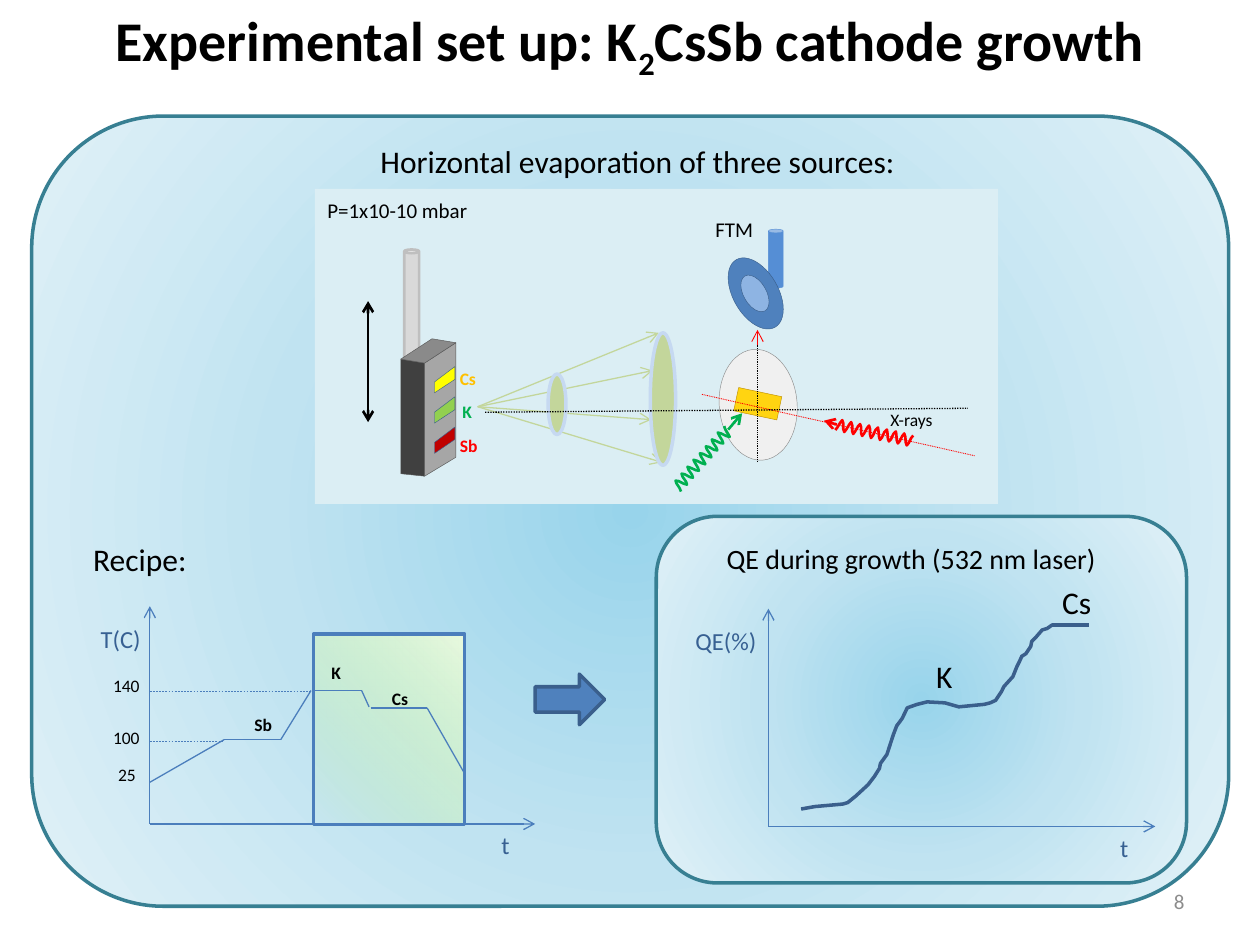
"""Build the K2CsSb cathode growth slide: evaporation set-up, recipe and QE curve."""
from math import cos, hypot, pi

from lxml.etree import SubElement
from pptx import Presentation
from pptx.dml.color import RGBColor
from pptx.enum.dml import MSO_LINE
from pptx.enum.shapes import MSO_CONNECTOR, MSO_SHAPE
from pptx.enum.text import MSO_ANCHOR, PP_ALIGN
from pptx.oxml.ns import qn
from pptx.util import Cm, Pt

T = dict(
    font="Calibri", title=32, head=18, sub=16, axis=14, note=12, small=10,
    black="000000", grey="8C8C8C", navy="376092", blue="4B7EBC", edge="3A5F8C",
    teal="377F92", red="FF0000", green="00B050", gold="FFC000", beam="C3D69B",
    rim="C6D9F1", steel="4F81BD", stage="DBEEF4",
    glow=[(0, "98D4EB", 100), (50, "C0E3F1", 100), (100, "E0F1F7", 100)],
    window=[(0, "D5F6C0", 0), (1, "BEF297", 0), (100, "EAFAE0", 100)],
)
INCH = 2.54

TITLE = [("Experimental set up: K", 0), ("2", -25), ("CsSb cathode growth", 0)]
PANELS = [(0.25, 0.92, 9.5, 6.27), (5.21, 4.1, 4.21, 2.91)]
AXES = [(1.19, 6.54, 4.25, 4.81), (6.1, 6.56, 9.17, 4.83)]
RECIPE = [[(1.19, 6.21), (1.78, 5.87), (2.23, 5.87), (2.47, 5.48)],
          [(2.49, 5.48), (2.87, 5.48), (2.93, 5.61)],
          [(2.94, 5.62), (3.39, 5.62), (3.69, 6.14)]]
LEVELS = [(5.49, 2.47), (5.88, 1.78)]
QE = [(6.36, 6.42), (6.47, 6.4), (6.69, 6.38), (6.73, 6.37), (6.79, 6.32), (6.89, 6.23),
      (6.94, 6.16), (6.98, 6.1), (6.99, 6.06), (7.04, 5.99), (7.09, 5.83), (7.12, 5.76),
      (7.14, 5.73), (7.16, 5.7), (7.2, 5.62), (7.28, 5.59), (7.36, 5.57), (7.5, 5.58),
      (7.61, 5.61), (7.81, 5.59), (7.86, 5.58), (7.9, 5.56), (7.95, 5.49), (7.97, 5.45),
      (8.04, 5.37), (8.07, 5.29), (8.09, 5.25), (8.11, 5.21), (8.14, 5.19), (8.18, 5.13),
      (8.19, 5.09), (8.22, 5.06), (8.27, 5), (8.31, 4.99), (8.35, 4.96), (8.64, 4.96)]
BLOCK = [([(3.18, 2.85), (3.37, 2.88), (3.37, 3.78), (3.18, 3.76)], "404040"),
         ([(3.37, 2.88), (3.62, 2.72), (3.62, 3.63), (3.37, 3.78)], "A6A6A6"),
         ([(3.18, 2.85), (3.43, 2.69), (3.62, 2.72), (3.37, 2.88)], "8A8A8A")]
SOURCES = [("Cs", "FFFF00", "gold", 3.55, 2.87, 0.33),
           ("K", "92D050", "green", 3.57, 3.13, 0.28),
           ("Sb", "C00000", "red", 3.55, 3.4, 0.34)]
BEAMS = [(5.23, 2.64), (5.25, 3.67), (5.18, 2.94), (5.17, 3.33)]
WAVES = [((7.24, 3.5), (6.64, 3.37), (6.54, 3.34), T["red"]),
         ((5.37, 3.87), (5.78, 3.41), (5.89, 3.28), T["green"])]
LABELS = {
    ("head", "black", False): [
        ("Horizontal evaporation of three sources:", 2.92, 1.08, 4.33),
        ("Recipe:", 0.64, 4.24, 0.95), ("K", 7.33, 5.17, 0.33), ("Cs", 8.33, 4.58, 0.44)],
    ("sub", "black", False): [("QE during growth (532 nm laser)", 5.67, 4.25, 3.49)],
    ("axis", "navy", False): [
        ("T(C)", 0.7, 4.9, 0.52), ("t", 3.88, 6.54, 0.27),
        ("QE(%)", 5.42, 4.92, 0.69), ("t", 8.79, 6.56, 0.27)],
    ("note", "black", False): [("FTM", 5.58, 1.67, 0.51), ("P=1x10-10 mbar", 2.5, 1.52, 1.33)],
    ("small", "black", False): [
        ("140", 0.8, 5.31, 0.42), ("100", 0.8, 5.72, 0.42),
        ("25", 0.84, 6.01, 0.35), ("X-rays", 6.97, 3.2, 0.55)],
    ("small", "black", True): [
        ("Sb", 1.92, 5.62, 0.38), ("K", 2.53, 5.21, 0.28), ("Cs", 3.01, 5.41, 0.33)],
}

prs = Presentation()
prs.slide_width, prs.slide_height = Cm(25.4), Cm(19.05)
s = prs.slides.add_slide(prs.slide_layouts[5])


def cm(*values):
    return [Cm(round(v * INCH, 2)) for v in values]


def add_run(p, words, size="small", color="black", bold=False):
    r = p.add_run()
    r.text = words
    r.font.name, r.font.size, r.font.bold = T["font"], Pt(T[size]), bold
    r.font.color.rgb = RGBColor.from_string(T[color])
    return r


def text(words, x, y, w, align=PP_ALIGN.LEFT, **style):
    tf = s.shapes.add_textbox(*cm(x, y, w, 0.3)).text_frame
    tf.word_wrap = False
    tf.paragraphs[0].alignment = align
    add_run(tf.paragraphs[0], words, **style)


def paint(sp, fill=None, line=None, width=0.75):
    sp.shadow.inherit = False
    for part, color in [(sp.fill, fill), (sp.line.fill, line)]:
        if color:
            part.solid()
            part.fore_color.rgb = RGBColor.from_string(color)
        else:
            part.background()
    sp.line.width = Pt(width)
    return sp


def shape(kind, box, fill=None, line=None, width=0.75, rot=0):
    sp = paint(s.shapes.add_shape(kind, *cm(*box)), fill, line, width)
    sp.rotation = rot
    return sp


def gradient(sp, stops, angle=None):
    sp.fill.gradient()
    grad = sp._element.spPr.find(qn("a:gradFill"))
    for child in list(grad):
        grad.remove(child)
    gs_list = SubElement(grad, qn("a:gsLst"))
    for pos, color, alpha in stops:
        gs = SubElement(gs_list, qn("a:gs"), pos=str(pos * 1000))
        clr = SubElement(gs, qn("a:srgbClr"), val=color)
        SubElement(clr, qn("a:alpha"), val=str(alpha * 1000))
    if angle is None:
        way = SubElement(grad, qn("a:path"), path="circle")
        SubElement(way, qn("a:fillToRect"), l="50000", t="50000", r="50000", b="50000")
    else:
        SubElement(grad, qn("a:lin"), ang=str(angle * 60000), scaled="0")


def line(a, b, color=T["blue"], width=0.75, dash=None, ends=()):
    c = s.shapes.add_connector(MSO_CONNECTOR.STRAIGHT, *cm(*a, *b))
    c.line.color.rgb, c.line.width = RGBColor.from_string(color), Pt(width)
    if dash:
        c.line.dash_style = dash
    for end in ends:
        SubElement(c.line._get_or_add_ln(), qn(f"a:{end}End"), type="arrow")
    SubElement(c._element.spPr, qn("a:effectLst"))


def outline(points, fill=None, color=None, width=0.75):
    pts = [cm(*pt) for pt in points]
    fb = s.shapes.build_freeform(*pts[0])
    fb.add_line_segments(pts[1:], close=bool(fill))
    paint(fb.convert_to_shape(), fill, color, width)


def wave(a, b, cycles=8.5, amp=0.045, steps=51):
    dx, dy = b[0] - a[0], b[1] - a[1]
    for i in range(steps + 1):
        t = i / steps
        off = amp * cos(2 * pi * cycles * t) / hypot(dx, dy)
        yield a[0] + dx * t - dy * off, a[1] + dy * t + dx * off


def panel(box, x, y, right, top):
    gradient(shape(MSO_SHAPE.ROUNDED_RECTANGLE, box, T["stage"], T["teal"], 2), T["glow"])
    for end in [(right, y), (x, top)]:
        line((x, y), end, ends=["tail"])


def draw_stage():
    oval, can, dot = MSO_SHAPE.OVAL, MSO_SHAPE.CAN, MSO_LINE.ROUND_DOT
    shape(MSO_SHAPE.RECTANGLE, (2.5, 1.5, 5.42, 2.5), T["stage"])
    shape(can, (6.1, 1.82, 0.12, 0.47), "558ED5", "558ED5", 0.25)
    shape(oval, (5.82, 2.02, 0.36, 0.62), T["steel"], T["edge"], 0.25, -30)
    shape(oval, (5.9, 2.17, 0.18, 0.32), "8EB4E3", T["edge"], 0.25, -30)
    shape(oval, (5.71, 2.77, 0.62, 0.88), "F0F0F0", T["grey"], 0.25, -5)
    shape(MSO_SHAPE.RECTANGLE, (5.84, 3.11, 0.35, 0.19), "FFD411", "BF9000", 0.25, 12)
    shape(can, (3.21, 1.98, 0.12, 0.95), "D9D9D9", "BFBFBF", 1.5)
    for points, fill in BLOCK:
        outline(points, fill, "595959", 0.25)
    for i, (name, fill, color, x, y, w) in enumerate(SOURCES):
        top = 2.91 + 0.24 * i
        patch = [(3.45, top + 0.12), (3.61, top), (3.61, top + 0.1), (3.45, top + 0.21)]
        outline(patch, fill, T["edge"], 0.25)
        text(name, x, y, w, color=color, bold=True)
    for end in BEAMS:
        line((3.79, 3.23), end, T["beam"], ends=["tail"])
    for box in [(5.16, 2.64, 0.2, 1.05), (4.35, 2.97, 0.14, 0.48)]:
        shape(oval, box, T["beam"], T["rim"], 2)
    line((5.57, 3.13), (7.74, 3.62), T["red"], 0.5, dot)
    line((6.01, 2.72), (6.01, 3.67), T["black"], 0.5, dot)
    line((6.01, 2.74), (6.01, 2.62), T["red"], 0.5, ends=["tail"])
    line((3.85, 3.27), (7.68, 3.24), T["black"], 0.75, dot)
    line((2.92, 2.39), (2.92, 3.35), T["black"], 1.5, ends=["head", "tail"])
    for a, b, tip, color in WAVES:
        outline(wave(a, b), color=color, width=1.5)
        line(b, tip, color, 1.5, ends=["tail"])


def main():
    title = s.shapes.title
    title.left, title.top, title.width, title.height = cm(0, 0, 10, 0.7)
    title.text_frame.vertical_anchor = MSO_ANCHOR.MIDDLE
    p = title.text_frame.paragraphs[0]
    p.alignment = PP_ALIGN.CENTER
    for words, base in TITLE:
        add_run(p, words, "title", bold=True).font._element.set("baseline", str(base * 1000))
    panel(PANELS[0], *AXES[0])
    window = shape(MSO_SHAPE.RECTANGLE, (2.49, 5.03, 1.2, 1.51), T["stage"], T["blue"], 2)
    gradient(window, T["window"], 315)
    for leg in RECIPE:
        for a, b in zip(leg, leg[1:]):
            line(a, b)
    for y, right in LEVELS:
        line((1.19, y), (right, y), width=0.25, dash=MSO_LINE.DASH)
    draw_stage()
    panel(PANELS[1], *AXES[1])
    shape(MSO_SHAPE.RIGHT_ARROW, (4.25, 5.35, 0.55, 0.4), T["steel"], T["edge"], 2)
    outline(QE, color=T["edge"], width=2)
    for (size, color, bold), labels in LABELS.items():
        for label in labels:
            text(*label, size=size, color=color, bold=bold)
    text("8", 7.17, 7, 2.33, PP_ALIGN.RIGHT, size="note", color="grey")
    prs.save("out.pptx")


main()
